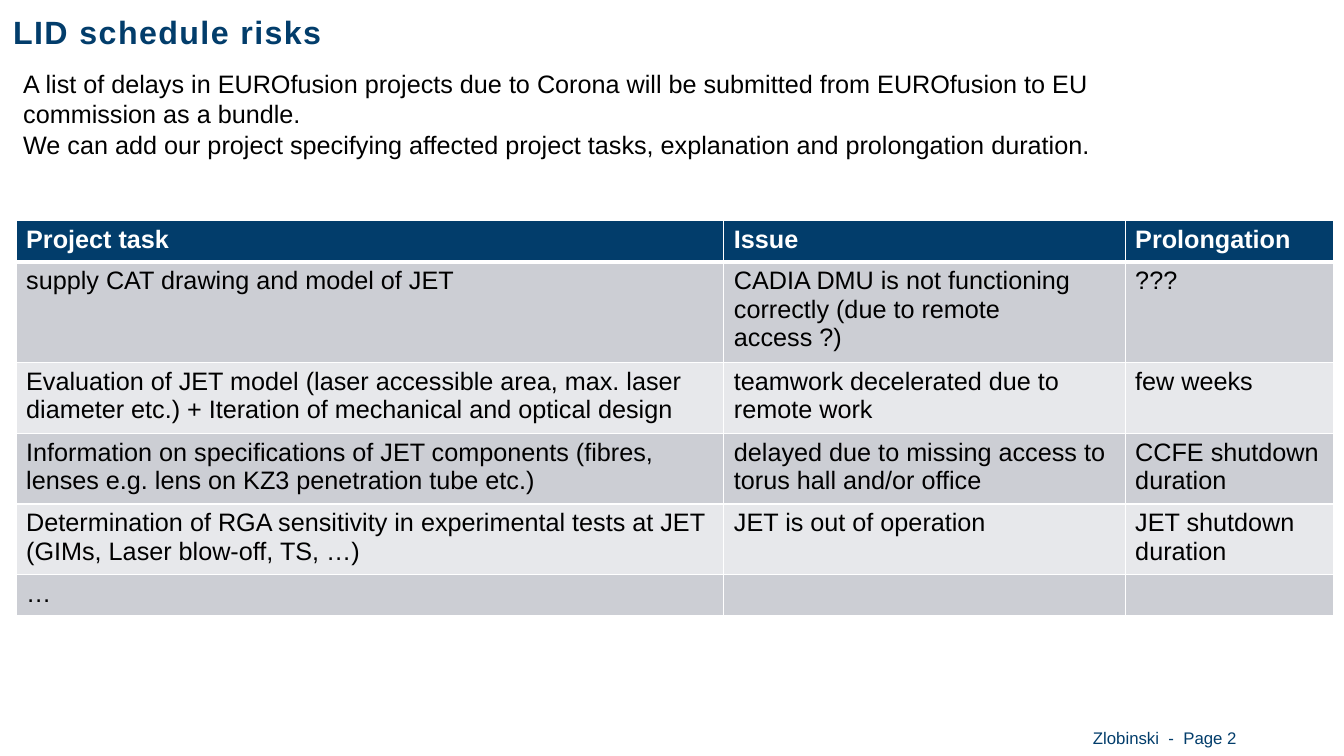
from lxml.etree import SubElement
from pptx import Presentation
from pptx.dml.color import RGBColor
from pptx.enum.text import MSO_ANCHOR, MSO_AUTO_SIZE, PP_ALIGN
from pptx.oxml.ns import qn
from pptx.util import Inches, Pt

# Content
TITLE = "LID schedule risks"
INTRO = [
    "A list of delays in EUROfusion projects due to Corona will be submitted "
    "from EUROfusion to EU commission as a bundle.",
    "We can add our project specifying affected project tasks, explanation "
    "and prolongation duration.",
]
FOOTER = "Zlobinski  -  Page 2"
RISKS = [
    ("Project task", "Issue", "Prolongation"),
    ("supply CAT drawing and model of JET",
     "CADIA DMU is not functioning correctly (due to remote access ?)", "???"),
    ("Evaluation of JET model (laser accessible area, max. laser diameter etc.) "
     "+ Iteration of mechanical and optical design",
     "teamwork decelerated due to remote work", "few weeks"),
    ("Information on specifications of JET components (fibres, lenses e.g. lens "
     "on KZ3 penetration tube etc.)",
     "delayed due to missing access to torus hall and/or office",
     "CCFE shutdown duration"),
    ("Determination of RGA sensitivity in experimental tests at JET\n"
     "(GIMs, Laser blow-off, TS, …)",
     "JET is out of operation", "JET shutdown duration"),
    ("…", "", ""),
]

# Look and layout, in inches
NAVY, WHITE, BLACK = "023D6B", "FFFFFF", "000000"
BANDS = ("E7E8EB", "CCCED4")
COLUMNS = (7.02, 3.98, 2.07)
ROWS = (0.41, 1.0, 0.7, 0.7, 0.7, 0.41)
ISSUE_INSET = 0.2  # right inset that breaks the first issue into three lines
TABLE_LEFT, TABLE_TOP = 0.16, 2.19
MARGIN = 0.13


def color(value):
    return RGBColor.from_string(value)


def write(frame, text, size=18, fill=BLACK, bold=False, tracking=None, line=None):
    """Fill a text frame, one paragraph for each line of text."""
    frame.word_wrap = True
    for index, words in enumerate(text.split("\n")):
        para = frame.paragraphs[0] if index == 0 else frame.add_paragraph()
        para.alignment = PP_ALIGN.LEFT
        para.space_before = Pt(0)
        if line:
            para.line_spacing = Pt(line)
        if not words:
            continue
        span = para.add_run()
        span.text = words
        span.font.name = "Arial"
        span.font.size = Pt(size)
        span.font.bold = bold
        span.font.color.rgb = color(fill)
        if tracking:
            span.font._element.set("spc", str(tracking * 100))


def place(box, left, top, width, height, inset=None):
    box.left, box.top = Inches(left), Inches(top)
    box.width, box.height = Inches(width), Inches(height)
    frame = box.text_frame
    frame.auto_size = MSO_AUTO_SIZE.NONE
    frame.vertical_anchor = MSO_ANCHOR.TOP
    if inset is not None:
        frame.margin_left = frame.margin_right = Inches(inset)
        frame.margin_top = frame.margin_bottom = Inches(inset)
    return frame


def border(cell, **widths):
    """Draw white cell edges; widths are in points."""
    properties = cell._tc.get_or_add_tcPr()
    for side, width in widths.items():
        edge = SubElement(properties, qn(f"a:ln{side}"), w=str(Pt(width)))
        paint = SubElement(edge, qn("a:solidFill"))
        SubElement(paint, qn("a:srgbClr"), val=WHITE)


deck = Presentation()
deck.slide_width, deck.slide_height = Inches(13.33), Inches(7.5)
page = deck.slides.add_slide(deck.slide_layouts[1])

# Title
frame = place(page.shapes.title, MARGIN, 0.1, 12.72, 0.5, inset=0)
write(frame, TITLE, size=23, fill=NAVY, bold=True, tracking=1, line=29)

# Introduction, without bullets
frame = place(page.placeholders[1], MARGIN, 0.63, 12.1, 1.01)
write(frame, "\n".join(INTRO))
for para in frame.paragraphs:
    properties = para._p.get_or_add_pPr()
    properties.set("marL", "0")
    properties.set("indent", "0")
    SubElement(properties, qn("a:buNone"))

# Risk table
table = page.shapes.add_table(
    len(ROWS), len(COLUMNS), Inches(TABLE_LEFT), Inches(TABLE_TOP),
    Inches(sum(COLUMNS)), Inches(sum(ROWS))).table
for column, width in zip(table.columns, COLUMNS):
    column.width = Inches(width)
for r, (risk, height) in enumerate(zip(RISKS, ROWS)):
    table.rows[r].height = Inches(height)
    header = r == 0
    for c, text in enumerate(risk):
        cell = table.cell(r, c)
        write(cell.text_frame, text, fill=WHITE if header else BLACK, bold=header)
        border(cell, L=1, R=1, T=3 if r == 1 else 1, B=3 if header else 1)
        cell.fill.solid()
        cell.fill.fore_color.rgb = color(NAVY if header else BANDS[r % 2])
table.cell(1, 1).margin_right = Inches(ISSUE_INSET)
# Keep the closing question mark with the word before it
issue = table.cell(1, 1).text_frame.paragraphs[0].runs[0]
issue.text = issue.text.replace(" ?", "\N{NO-BREAK SPACE}?")

# Footer
footer = page.shapes.add_textbox(0, 0, 0, 0)
write(place(footer, 10.84, 7.22, 2.44, 0.24, inset=0), FOOTER, size=12, fill=NAVY)

deck.save("out.pptx")
